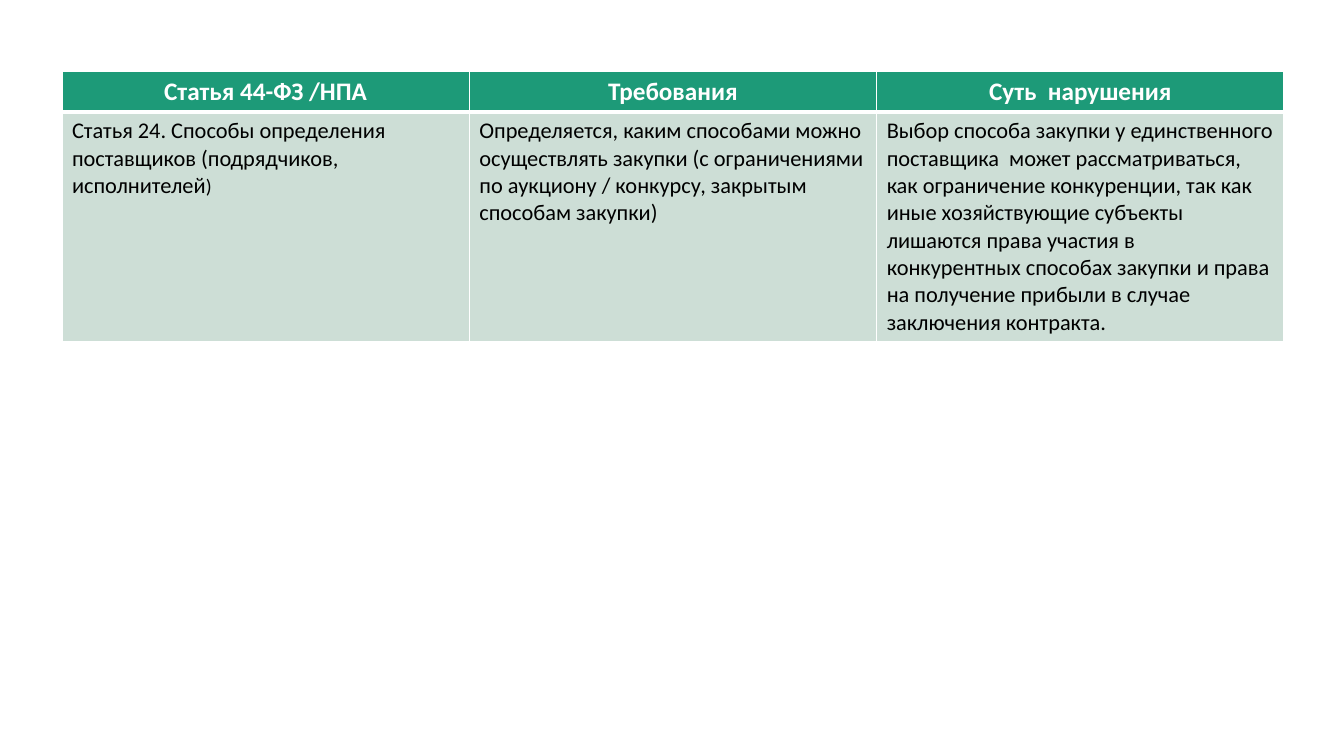
from dataclasses import dataclass

from lxml import etree
from pptx import Presentation
from pptx.dml.color import RGBColor
from pptx.enum.text import PP_ALIGN
from pptx.oxml.ns import qn
from pptx.table import _Cell
from pptx.util import Emu, Pt

EMU_PER_PX = 9525
SLIDE_WIDTH, SLIDE_HEIGHT = 1280, 720
TABLE_LEFT, TABLE_TOP = 59, 68
COLUMN_WIDTH = 388
ROW_HEIGHTS = (39, 214)
BLANK_LAYOUT = 6

WHITE = RGBColor(0xFF, 0xFF, 0xFF)
BLACK = RGBColor(0x00, 0x00, 0x00)
GREEN = RGBColor(0x1D, 0x9A, 0x78)
PALE_GREEN = RGBColor(0xCD, 0xDE, 0xD6)
CENTER, LEFT = PP_ALIGN.CENTER, PP_ALIGN.LEFT


@dataclass(frozen=True)
class TextRun:
    text: str
    size: int


@dataclass(frozen=True)
class RowStyle:
    fill: RGBColor
    color: RGBColor
    bold: bool
    alignment: PP_ALIGN
    borders: dict[str, int]


@dataclass(frozen=True)
class TableRow:
    style: RowStyle
    cells: tuple[tuple[TextRun, ...], ...]


HEADER_STYLE = RowStyle(GREEN, WHITE, True, CENTER, {"lnL": 1, "lnR": 1, "lnT": 1, "lnB": 3})
BODY_STYLE = RowStyle(PALE_GREEN, BLACK, False, LEFT, {"lnL": 1, "lnR": 1, "lnT": 3, "lnB": 1})

ROWS = (
    TableRow(HEADER_STYLE, (
        (TextRun("Статья 44-ФЗ /НПА", 18),),
        (TextRun("Требования", 18),),
        (TextRun("Суть  нарушения", 18),),
    )),
    TableRow(BODY_STYLE, (
        (
            TextRun("Статья 24. Способы определения поставщиков (подрядчиков, исполнителей", 16),
            TextRun(")", 14),
        ),
        (TextRun(
            "Определяется, каким способами можно осуществлять закупки "
            "(с ограничениями по аукциону / конкурсу, закрытым способам закупки)", 16),),
        (TextRun(
            "Выбор способа закупки у единственного поставщика  может рассматриваться, "
            "как ограничение конкуренции, так как иные хозяйствующие субъекты лишаются "
            "права участия в конкурентных способах закупки и права на получение прибыли "
            "в случае заключения контракта.", 16),),
    )),
)


def px(length: int) -> Emu:
    return Emu(length * EMU_PER_PX)


def set_borders(cell: _Cell, borders: dict[str, int]) -> None:
    properties = cell._tc.get_or_add_tcPr()
    for edge, width in borders.items():
        line = etree.SubElement(properties, qn(f"a:{edge}"), w=str(Pt(width)))
        fill = etree.SubElement(line, qn("a:solidFill"))
        etree.SubElement(fill, qn("a:srgbClr"), val=str(WHITE))


def fill_cell(cell: _Cell, text_runs: tuple[TextRun, ...], style: RowStyle) -> None:
    set_borders(cell, style.borders)
    cell.fill.solid()
    cell.fill.fore_color.rgb = style.fill
    paragraph = cell.text_frame.paragraphs[0]
    paragraph.alignment = style.alignment
    for text_run in text_runs:
        run = paragraph.add_run()
        run.text = text_run.text
        run.font.color.rgb = style.color
        font_format = {"name": "Calibri", "size": Pt(text_run.size), "bold": style.bold}
        for attribute, value in font_format.items():
            setattr(run.font, attribute, value)


def main() -> None:
    presentation = Presentation()
    presentation.slide_width = px(SLIDE_WIDTH)
    presentation.slide_height = px(SLIDE_HEIGHT)
    slide = presentation.slides.add_slide(presentation.slide_layouts[BLANK_LAYOUT])
    column_count = len(ROWS[0].cells)
    table = slide.shapes.add_table(
        len(ROWS), column_count, px(TABLE_LEFT), px(TABLE_TOP),
        px(column_count * COLUMN_WIDTH), px(sum(ROW_HEIGHTS)),
    ).table
    for column in table.columns:
        column.width = px(COLUMN_WIDTH)
    for row, height, content in zip(table.rows, ROW_HEIGHTS, ROWS):
        row.height = px(height)
        for cell, text_runs in zip(row.cells, content.cells):
            fill_cell(cell, text_runs, content.style)
    presentation.save("out.pptx")


if __name__ == "__main__":
    main()
